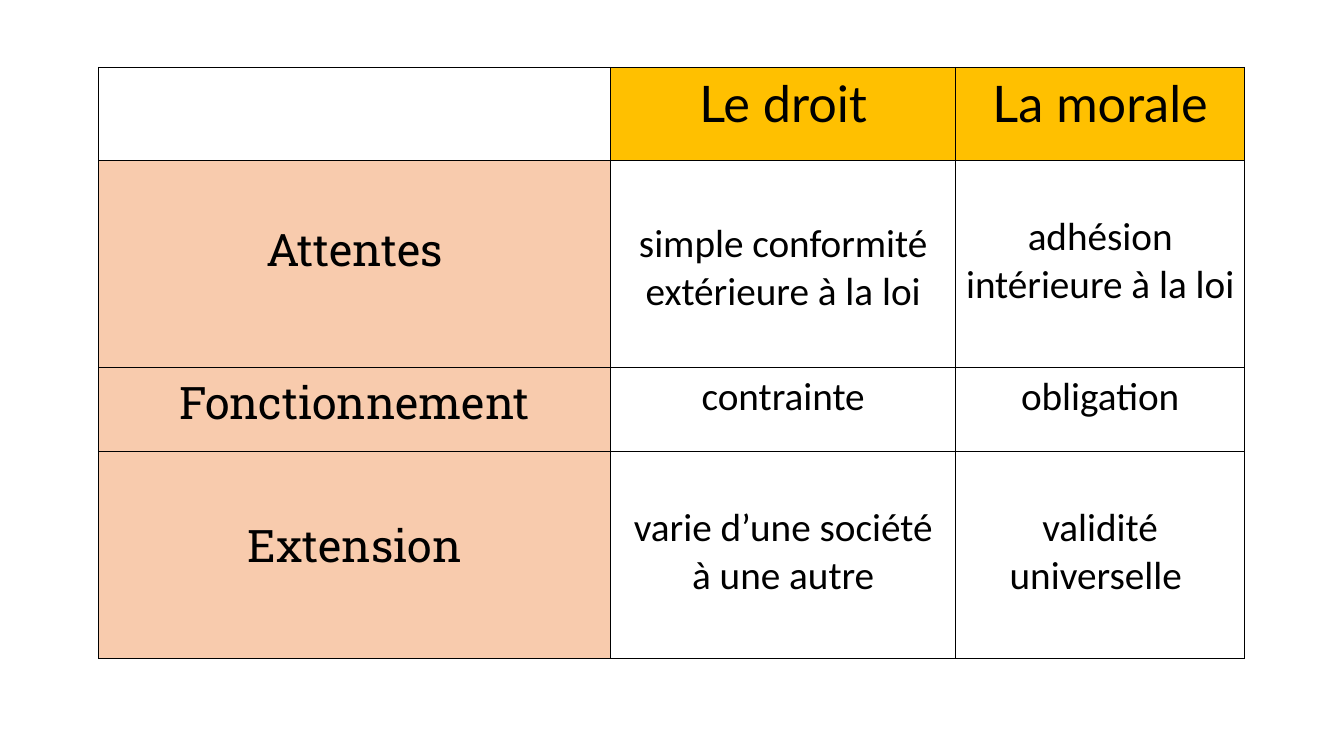
from pptx import Presentation
from pptx.dml.color import RGBColor
from pptx.enum.text import MSO_ANCHOR, PP_ALIGN
from pptx.oxml import parse_xml
from pptx.oxml.ns import nsdecls
from pptx.util import Pt


def colour(code):
    return RGBColor.from_string(code)


def border(side):
    return parse_xml(
        f'<a:{side} {nsdecls("a")} w="{Pt(1)}"><a:solidFill>'
        f'<a:srgbClr val="000000"/></a:solidFill></a:{side}>'
    )


heading = {"name": "Lato", "size": Pt(36)}
criterion = {"name": "Roboto Slab", "size": Pt(32)}
answer = {"name": "Calibri", "size": Pt(28)}

column_widths = [365.76, 246.24, 206.64]
row_heights = [66.24, 148.32, 59.76, 147.6]
comparison = [
    ["", "Le droit", "La morale"],
    ["Attentes", "simple conformité extérieure à la loi", "adhésion intérieure à la loi"],
    ["Fonctionnement", "contrainte", "obligation"],
    ["Extension", "varie d’une société à une autre", "validité universelle "],
]
top_margins = [
    [3.6, 3.6, 3.6],
    [42.6, 42.6, 37.8],
    [3.6, 3.6, 3.6],
    [45.8, 37.8, 37.8],
]

presentation = Presentation()
presentation.slide_width = Pt(960)
presentation.slide_height = Pt(540)
slide = presentation.slides.add_slide(presentation.slide_layouts[6])

law_and_morals = slide.shapes.add_table(
    len(row_heights), len(column_widths),
    Pt(70.56), Pt(48.24), Pt(sum(column_widths)), Pt(sum(row_heights)),
).table
law_and_morals.first_row = False
law_and_morals.horz_banding = False
for column, width in zip(law_and_morals.columns, column_widths):
    column.width = Pt(width)
for row, height in zip(law_and_morals.rows, row_heights):
    row.height = Pt(height)

for r, entries in enumerate(comparison):
    for c, wording in enumerate(entries):
        cell = law_and_morals.cell(r, c)
        cell.vertical_anchor = MSO_ANCHOR.TOP
        cell.margin_top = Pt(top_margins[r][c])
        properties = cell._tc.get_or_add_tcPr()
        for side in ("lnL", "lnR", "lnT", "lnB"):
            properties.append(border(side))

        if not wording:
            cell.fill.background()
            continue
        if r == 0:
            lettering, background = heading, "FFC000"
        elif c == 0:
            lettering, background = criterion, "F8CBAD"
        else:
            lettering, background = answer, None
        if background:
            cell.fill.solid()
            cell.fill.fore_color.rgb = colour(background)
        else:
            cell.fill.background()

        paragraph = cell.text_frame.paragraphs[0]
        paragraph.alignment = PP_ALIGN.CENTER
        run = paragraph.add_run()
        run.text = wording
        run.font.color.rgb = colour("000000")
        for attribute, value in lettering.items():
            setattr(run.font, attribute, value)

presentation.save("out.pptx")
